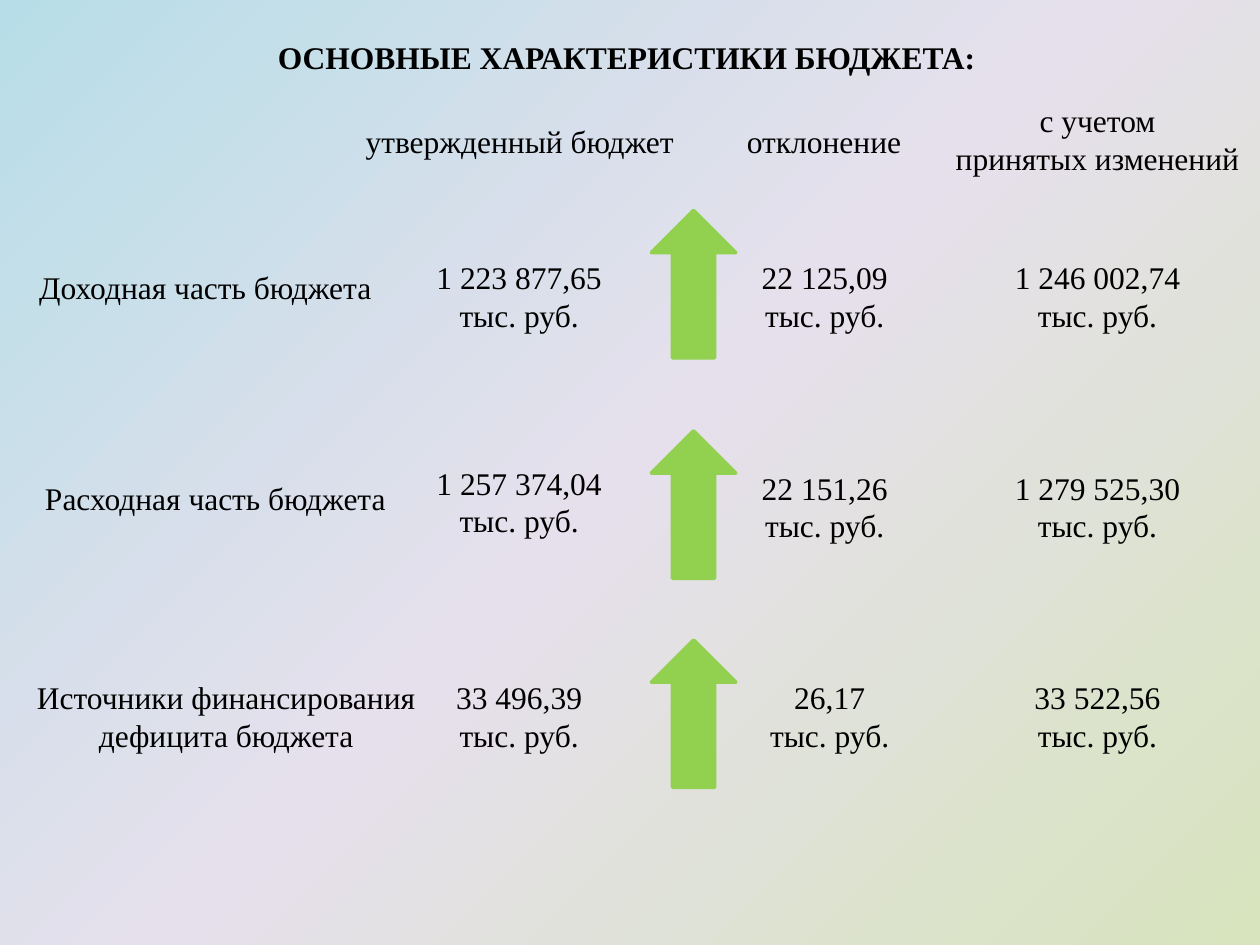
import pptx
import pptx.dml.color
import pptx.enum.shapes
import pptx.enum.text
import pptx.oxml
import pptx.oxml.ns
import pptx.util
from pptx.util import Inches

COLORS = {
    "text": "000000",
    "arrow": "92D050",
    "green": "D7E4BD",
    "lilac": "E6E0EC",
    "blue": "B7DEE8",
}
FONT = "Times New Roman"
LINE_HEIGHTS = {1: 0.4, 2: 0.71}

HEADERS = [
    ("утвержденный бюджет", 2.75, 0.92, 2.75, 1),
    ("отклонение", 5.75, 0.92, 1.58, 1),
    ("с учетом\nпринятых изменений", 7.42, 0.75, 2.58, 2),
]
LABELS = [
    ("Доходная часть бюджета", 0.17, 2.08, 2.92, 1),
    ("Расходная часть бюджета", 0.25, 3.75, 2.92, 1),
    ("Источники финансирования дефицита бюджета", 0.17, 5.33, 3.25, 2),
]
VALUES = [
    ("1 223 877,65 тыс. руб.", 3.33, 2, 1.58, 2),
    ("22 125,09 тыс. руб.", 5.92, 2, 1.25, 2),
    ("1 246 002,74 тыс. руб.", 7.75, 2, 1.92, 2),
    ("1 257 374,04 тыс. руб.", 3.33, 3.63, 1.58, 2),
    ("22 151,26 тыс. руб.", 5.92, 3.67, 1.25, 2),
    ("1 279 525,30 тыс. руб.", 7.92, 3.67, 1.58, 2),
    ("33 496,39\nтыс. руб.", 3.33, 5.33, 1.58, 2),
    ("26,17\nтыс. руб.", 5.92, 5.33, 1.33, 2),
    ("33 522,56\nтыс. руб.", 7.92, 5.33, 1.58, 2),
]
ARROW_TOPS = [1.67, 3.42, 5.08]


def rgb(name):
    return pptx.dml.color.RGBColor.from_string(COLORS[name])


def set_background(s):
    s.background.fill.gradient()
    grad = s.element.find(".//" + pptx.oxml.ns.qn("a:gradFill"))
    stops = "".join(
        f'<a:gs pos="{pos}"><a:srgbClr val="{COLORS[name]}"/></a:gs>'
        for pos, name in ((0, "green"), (50000, "lilac"), (100000, "blue"))
    )
    new_grad = pptx.oxml.parse_xml(
        f'<a:gradFill {pptx.oxml.ns.nsdecls("a")} rotWithShape="1">'
        f"<a:gsLst>{stops}</a:gsLst>"
        '<a:path path="circle"><a:fillToRect l="100000" t="100000"/></a:path>'
        "</a:gradFill>"
    )
    grad.getparent().replace(grad, new_grad)


def add_text(s, text, left, top, width, lines, bold=False, wrap=True):
    sp = s.shapes.add_textbox(
        Inches(left), Inches(top), Inches(width), Inches(LINE_HEIGHTS[lines])
    )
    tf = sp.text_frame
    tf.word_wrap = wrap
    tf.auto_size = pptx.enum.text.MSO_AUTO_SIZE.SHAPE_TO_FIT_TEXT
    tf.text = text
    for p in tf.paragraphs:
        p.alignment = pptx.enum.text.PP_ALIGN.CENTER
        p.font.name = FONT
        p.font.size = pptx.util.Pt(18)
        p.font.bold = bold
        p.font.color.rgb = rgb("text")


def add_arrow(s, top):
    sp = s.shapes.add_shape(
        pptx.enum.shapes.MSO_SHAPE.UP_ARROW,
        Inches(5.17), Inches(top), Inches(0.67), Inches(1.17),
    )
    sp.shadow.inherit = False
    sp.fill.solid()
    sp.fill.fore_color.rgb = rgb("arrow")
    sp.line.color.rgb = rgb("arrow")
    sp.line.width = pptx.util.Pt(2)


def main():
    prs = pptx.Presentation()
    prs.slide_width, prs.slide_height = Inches(10), Inches(7.5)
    s = prs.slides.add_slide(prs.slide_layouts[6])
    set_background(s)
    add_text(s, "ОСНОВНЫЕ ХАРАКТЕРИСТИКИ БЮДЖЕТА:", 2.08, 0.25, 5.79, 1,
             bold=True, wrap=False)
    for top in ARROW_TOPS:
        add_arrow(s, top)
    for item in HEADERS + LABELS + VALUES:
        add_text(s, *item)
    prs.save("out.pptx")


if __name__ == "__main__":
    main()
